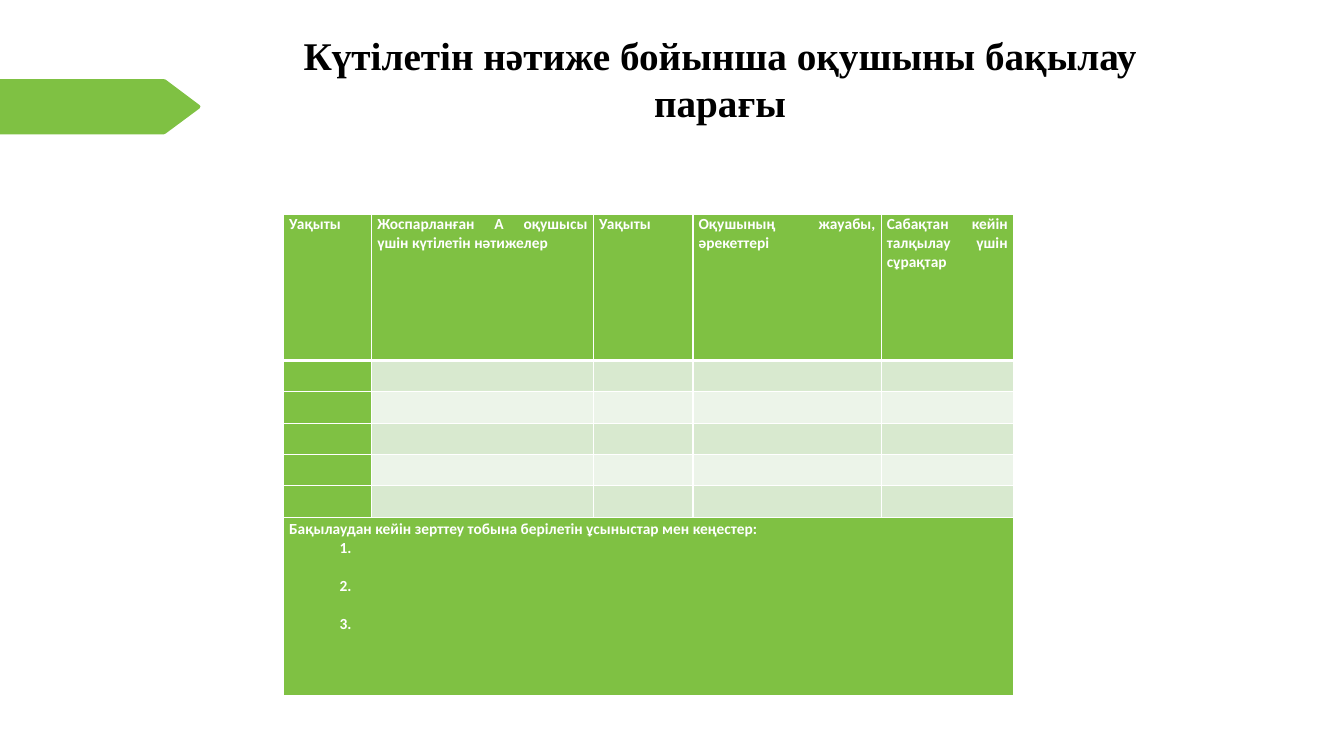
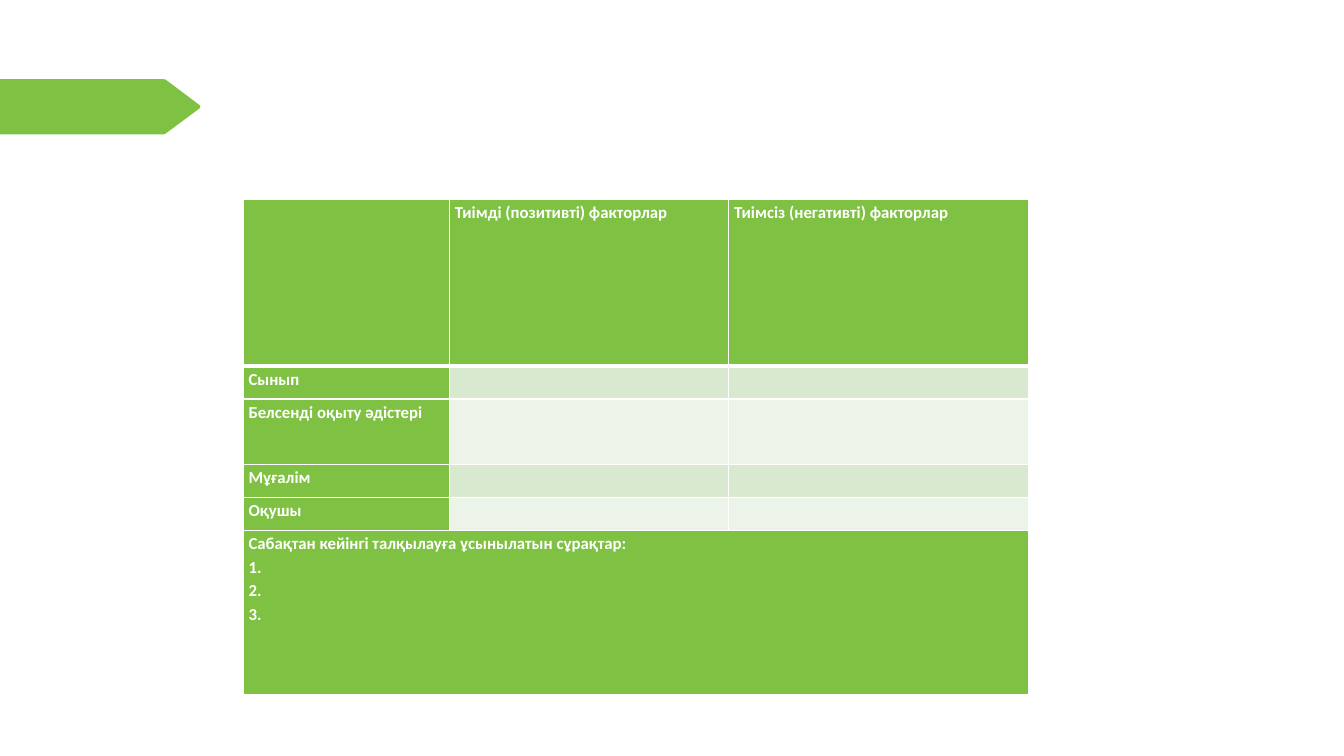
from lxml import etree
from pptx import Presentation
from pptx import util as u
from pptx.dml.color import RGBColor
from pptx.enum import text
from pptx.oxml.ns import qn

Pt = u.Pt
TITLE_ONLY, BLANK = 5, 6


def rgb(hex_color):
    return RGBColor.from_string(hex_color)


class Deck:
    GREEN, WHITE, BLACK = "7FC143", "FFFFFF", "000000"
    BANDS = ("D8E9CF", "ECF4E9")
    TITLE_FONT, TABLE_FONT = "Times New Roman", "Calibri"
    ARROW = [(107.5, 56.5), (117, 56.5), (118.5, 57), (142.5, 75),
             (143.2, 76), (142.5, 77.5), (118.5, 95.3), (117, 96), (0, 96)]

    def __init__(self):
        self.prs = Presentation()
        self.prs.slide_width, self.prs.slide_height = Pt(960), Pt(540)
        self.slide = None

    def new_slide(self, layout):
        self.slide = self.prs.slides.add_slide(self.prs.slide_layouts[layout])
        self.arrow()

    def arrow(self):
        """Draw the green pointer that every slide has at its left edge."""
        outline = self.slide.shapes.build_freeform(0, Pt(56.5), scale=1.0)
        outline.add_line_segments([(Pt(x), Pt(y)) for x, y in self.ARROW])
        pointer = outline.convert_to_shape()
        pointer.shadow.inherit = False
        pointer.fill.solid()
        pointer.fill.fore_color.rgb = rgb(self.GREEN)
        pointer.line.fill.background()

    def add_run(self, paragraph, words, font, size, color):
        run = paragraph.add_run()
        run.text = words
        run.font.name, run.font.size, run.font.bold = font, Pt(size), True
        run.font.color.rgb = rgb(color)

    def title(self, words, left, top, width, height):
        heading = self.slide.shapes.title
        heading.left, heading.top = Pt(left), Pt(top)
        heading.width, heading.height = Pt(width), Pt(height)
        frame = heading.text_frame
        frame.word_wrap = True
        frame.auto_size = text.MSO_AUTO_SIZE.NONE
        frame.vertical_anchor = text.MSO_ANCHOR.TOP
        frame.margin_left = frame.margin_right = Pt(5)
        frame.margin_top = frame.margin_bottom = Pt(2.5)
        paragraph = frame.paragraphs[0]
        paragraph.alignment = text.PP_ALIGN.CENTER
        self.add_run(paragraph, words, self.TITLE_FONT, 28, self.BLACK)

    def borders(self, cell, top, bottom):
        properties = cell._tc.get_or_add_tcPr()
        for side, width in (("L", 1), ("R", 1), ("T", top), ("B", bottom)):
            edge = etree.SubElement(properties, qn("a:ln" + side), w=str(Pt(width)))
            fill = etree.SubElement(edge, qn("a:solidFill"))
            etree.SubElement(fill, qn("a:srgbClr"), val=self.WHITE)

    def cell_text(self, cell, lines, size, spacing=None, indent=0, gap=0):
        """Fill a cell; indent and gap shape the numbered lines after the first."""
        frame = cell.text_frame
        for number, words in enumerate(lines):
            paragraph = frame.add_paragraph() if number else frame.paragraphs[0]
            paragraph.alignment = text.PP_ALIGN.JUSTIFY
            if number and indent:
                paragraph._p.get_or_add_pPr().set("marL", str(Pt(indent)))
            elif spacing:
                paragraph.line_spacing = spacing
            if number > 1:
                paragraph.space_before = Pt(gap)
            self.add_run(paragraph, words, self.TABLE_FONT, size, self.WHITE)

    def table(self, left, top, widths, heights):
        """Add a grid with green header row, first column and merged last row."""
        last = len(heights) - 1
        grid = self.slide.shapes.add_table(
            len(heights), len(widths), Pt(left), Pt(top),
            Pt(sum(widths)), Pt(sum(heights))).table
        grid.horz_banding = False
        for column, width in zip(grid.columns, widths):
            column.width = Pt(width)
        for r, height in enumerate(heights):
            grid.rows[r].height = Pt(height)
            for c in range(len(widths)):
                cell = grid.cell(r, c)
                cell.margin_left = cell.margin_right = Pt(4)
                cell.margin_top = cell.margin_bottom = 0
                self.borders(cell, 3 if r == 1 else 1, 3 if r == 0 else 1)
                is_green = r in (0, last) or c == 0
                cell.fill.solid()
                cell.fill.fore_color.rgb = rgb(
                    self.GREEN if is_green else self.BANDS[(r - 1) % 2])
        grid.cell(last, 0).merge(grid.cell(last, len(widths) - 1))
        return grid


def observation_slide(deck):
    deck.new_slide(TITLE_ONLY)
    deck.title("Күтілетін нәтиже бойынша оқушыны бақылау парағы",
               202.5, 19.5, 623.5, 107)
    sheet = deck.table(202.5, 153.5, [63, 158.5, 71, 134.5, 94.5],
                       [104] + [22.4] * 5 + [127.5])
    headings = ["Уақыты", "Жоспарланған А оқушысы үшін күтілетін нәтижелер",
                "Уақыты", "Оқушының жауабы, әрекеттері",
                "Сабақтан кейін талқылау үшін сұрақтар"]
    for column, heading in enumerate(headings):
        deck.cell_text(sheet.cell(0, column), [heading], 11)
    advice = ["Бақылаудан кейін зерттеу тобына берілетін ұсыныстар мен кеңестер:",
              "1.", "2.", "3."]
    deck.cell_text(sheet.cell(6, 0), advice, 11, spacing=1.15, indent=36, gap=13.5)


def factors_slide(deck):
    deck.new_slide(BLANK)
    factors = deck.table(173.5, 142.5, [147.5, 199.5, 214],
                         [119, 23.5, 47, 23.5, 23.5, 117.5])
    headings = ["Тиімді (позитивті) факторлар", "Тиімсіз (негативті) факторлар"]
    for column, heading in enumerate(headings, 1):
        deck.cell_text(factors.cell(0, column), [heading], 12, spacing=1.15)
    aspects = ["Сынып", "Белсенді оқыту әдістері", "Мұғалім", "Оқушы"]
    for row, aspect in enumerate(aspects, 1):
        deck.cell_text(factors.cell(row, 0), [aspect], 12, spacing=1.15)
    questions = ["Сабақтан кейінгі талқылауға ұсынылатын сұрақтар:",
                 "1.", "2.", "3."]
    deck.cell_text(factors.cell(5, 0), questions, 12, spacing=1.15)


def main():
    deck = Deck()
    observation_slide(deck)
    factors_slide(deck)
    deck.prs.save("out.pptx")


if __name__ == "__main__":
    main()
